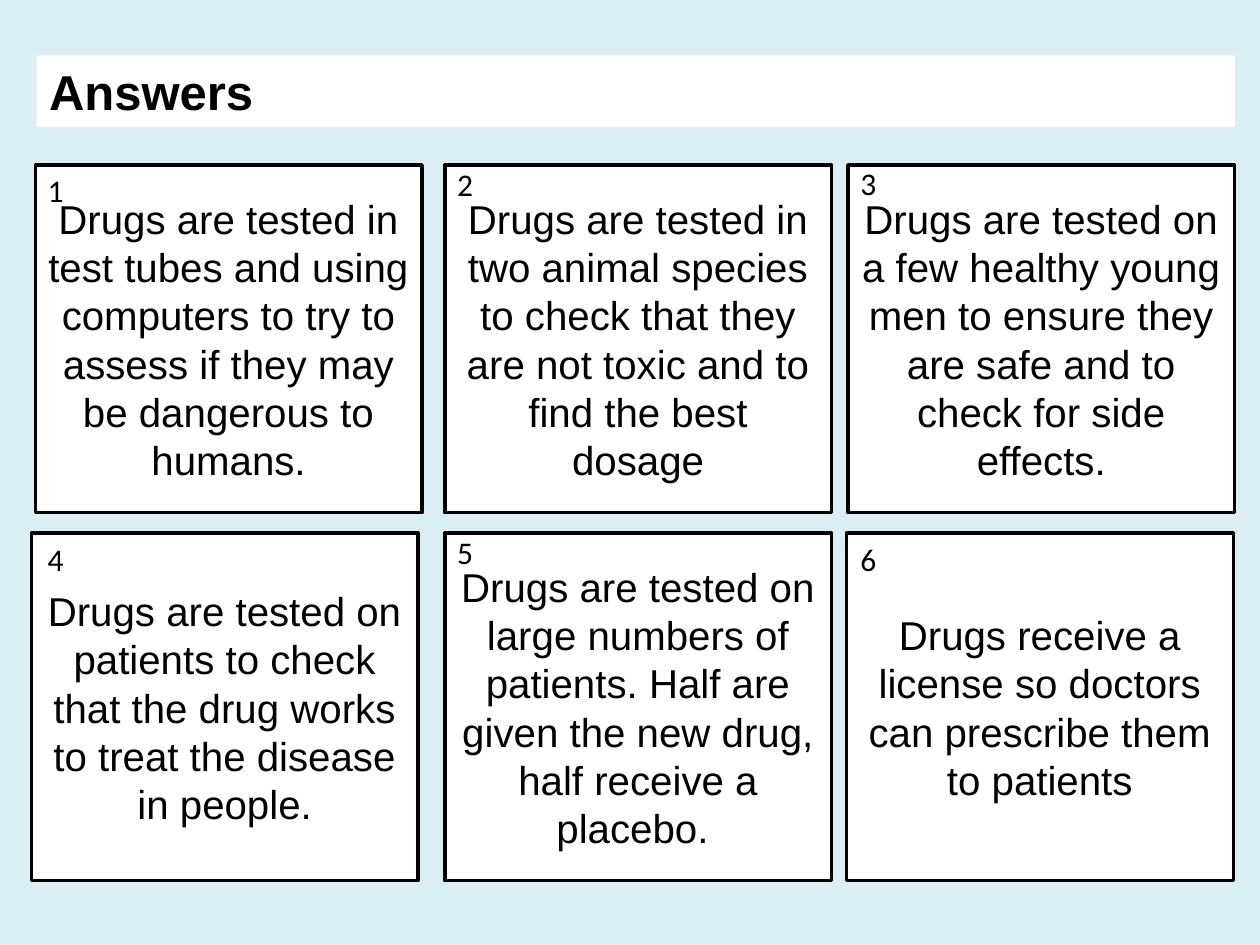
from dataclasses import dataclass

from pptx import Presentation
from pptx.dml.color import RGBColor
from pptx.enum.shapes import MSO_SHAPE
from pptx.enum.text import MSO_ANCHOR, PP_ALIGN
from pptx.util import Pt


@dataclass(frozen=True)
class Theme:
    background: RGBColor = RGBColor(0xDB, 0xEE, 0xF4)
    panel: RGBColor = RGBColor(0xFF, 0xFF, 0xFF)
    ink: RGBColor = RGBColor(0, 0, 0)
    text_font: str = "Arial"
    number_font: str = "Calibri"
    title_size: int = 28
    step_size: int = 23
    number_size: int = 18


theme = Theme()


def add_text(frame, text, font, size, align=PP_ALIGN.LEFT, bold=False):
    paragraph = frame.paragraphs[0]
    paragraph.alignment = align
    run = paragraph.add_run()
    run.text = text
    run.font.name = font
    run.font.size = Pt(size)
    run.font.bold = bold
    run.font.color.rgb = theme.ink


presentation = Presentation()
presentation.slide_width = Pt(720)
presentation.slide_height = Pt(540)
slide = presentation.slides.add_slide(presentation.slide_layouts[5])
slide.background.fill.solid()
slide.background.fill.fore_color.rgb = theme.background

heading = slide.shapes.title
heading.left, heading.top = Pt(20.9), Pt(31.7)
heading.width, heading.height = Pt(684.7), Pt(41)
heading.fill.solid()
heading.fill.fore_color.rgb = theme.panel
heading.text_frame.vertical_anchor = MSO_ANCHOR.MIDDLE
add_text(heading.text_frame, "Answers", theme.text_font, theme.title_size, bold=True)

# Card left, number left, number top, wording
row_tops = (94.3, 304.6)
steps = [
    (20.2, 20.2, 94.3, "Drugs are tested in test tubes and using computers to try to "
     "assess if they may be dangerous to humans."),
    (254.2, 254.2, 90.7, "Drugs are tested in two animal species to check that they "
     "are not toxic and to find the best dosage"),
    (484.6, 484.6, 90, "Drugs are tested on a few healthy young men to ensure they "
     "are safe and to check for side effects."),
    (18, 20.2, 305.3, "Drugs are tested on patients to check that the drug works to "
     "treat the disease in people."),
    (254.2, 254.2, 301, "Drugs are tested on large numbers of patients. Half are given "
     "the new drug, half receive a placebo. "),
    (483.8, 484.6, 305.3, "Drugs receive a license so doctors can prescribe them to "
     "patients"),
]

for index, (card_left, number_left, number_top, wording) in enumerate(steps):
    card = slide.shapes.add_shape(
        MSO_SHAPE.RECTANGLE, Pt(card_left), Pt(row_tops[index // 3]), Pt(221), Pt(198.7))
    card.shadow.inherit = False
    card.fill.solid()
    card.fill.fore_color.rgb = theme.panel
    card.line.color.rgb = theme.ink
    card.line.width = Pt(2)
    card.text_frame.word_wrap = True
    card.text_frame.vertical_anchor = MSO_ANCHOR.MIDDLE
    add_text(card.text_frame, wording, theme.text_font, theme.step_size, PP_ALIGN.CENTER)

    number = slide.shapes.add_textbox(Pt(number_left), Pt(number_top), Pt(23.8), Pt(28.8))
    number.text_frame.word_wrap = False
    add_text(number.text_frame, str(index + 1), theme.number_font, theme.number_size)

presentation.save("out.pptx")
